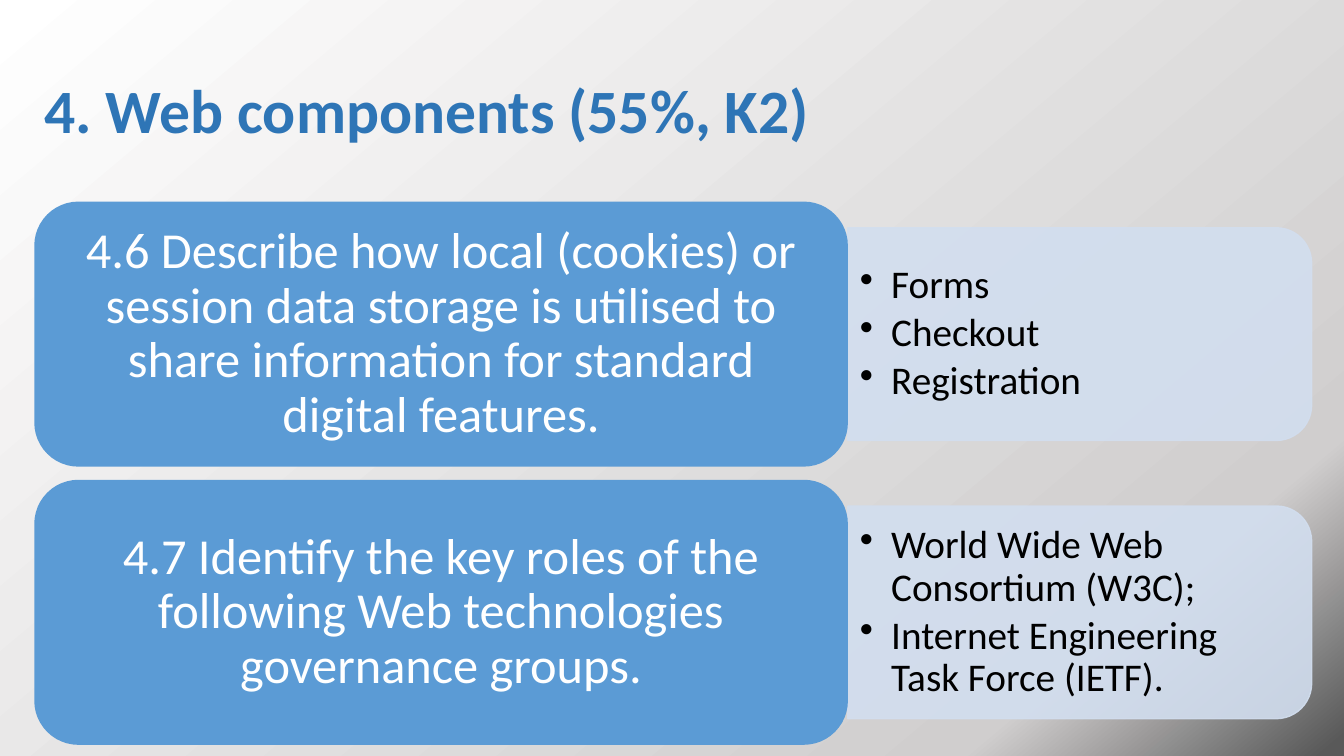
from copy import deepcopy
from dataclasses import dataclass
from math import cos, pi, sin

from lxml import etree
from pptx import Presentation
from pptx import util as u
from pptx.dml.color import RGBColor
from pptx.enum import shapes, text
from pptx.oxml import ns


@dataclass(frozen=True)
class Theme:
    font: str = "Calibri"
    title_size: int = 44
    outcome_size: int = 36
    detail_size: int = 28
    title: str = "2E75B6"
    outcome_fill: str = "5B9BD5"
    outcome_text: str = "FFFFFF"
    detail_fill: str = "D2DEEF"
    detail_text: str = "000000"
    detail_alpha: int = 90
    backdrop: tuple = ((0.01, "595959"), (0.17, "D0CECE"), (1, "FFFFFF"))


class OutcomeSlide:
    def __init__(self, slide, theme):
        self.slide = slide
        self.theme = theme

    def backdrop(self):
        fill = self.slide.background.fill
        fill.gradient()
        fill.gradient_angle = 130
        stops = self.slide.element.find(".//" + ns.qn("a:gsLst"))
        stops.append(deepcopy(stops[0]))
        for stop, (position, color) in zip(fill.gradient_stops, self.theme.backdrop):
            stop.position = position
            stop.color.rgb = RGBColor.from_string(color)

    def set_text(self, shape, lines, size, color, insets, align="LEFT",
                 bold=False, bullets=False):
        frame = shape.text_frame
        left, top, right, bottom = map(u.Inches, insets)
        frame_format = {
            "word_wrap": True, "vertical_anchor": text.MSO_ANCHOR.MIDDLE,
            "margin_left": left, "margin_top": top,
            "margin_right": right, "margin_bottom": bottom,
        }
        for name, value in frame_format.items():
            setattr(frame, name, value)
        frame.text = "\n".join(lines)
        for paragraph in frame.paragraphs:
            paragraph.alignment = getattr(text.PP_ALIGN, align)
            paragraph.line_spacing = 0.9
            if bullets:
                self.bullet(paragraph)
            font_format = {"name": self.theme.font, "size": u.Pt(size), "bold": bold}
            for name, value in font_format.items():
                setattr(paragraph.font, name, value)
            paragraph.font.color.rgb = RGBColor.from_string(color)

    def bullet(self, paragraph):
        paragraph.space_after = u.Pt(4)
        properties = paragraph._p.get_or_add_pPr()
        properties.set("marL", str(u.Inches(0.31)))
        properties.set("indent", str(-u.Inches(0.31)))
        etree.SubElement(properties, ns.qn("a:buChar")).set("char", "•")

    def title(self, words):
        heading = self.slide.shapes.add_textbox(
            u.Inches(0.34), u.Inches(0.4), u.Inches(12.68), u.Inches(1.45))
        self.set_text(heading, [words], self.theme.title_size, self.theme.title,
                      (0.1, 0.05, 0.1, 0.05), bold=True)

    def outcome(self, top, words):
        card = self.slide.shapes.add_shape(
            shapes.MSO_SHAPE.ROUNDED_RECTANGLE,
            u.Inches(0.34), u.Inches(top), u.Inches(8.07), u.Inches(2.63))
        card.shadow.inherit = False
        card.fill.solid()
        card.fill.fore_color.rgb = RGBColor.from_string(self.theme.outcome_fill)
        card.line.fill.background()
        self.set_text(card, [words], self.theme.outcome_size,
                      self.theme.outcome_text,
                      (0.15, 0.07, 0.15, 0.07), align="CENTER")

    def details(self, top, items):
        left, right, bottom, radius, steps = 8.41, 13.01, top + 2.11, 0.35, 12
        corners = ((top + radius, -pi / 2), (bottom - radius, 0))
        outline = [
            (right - radius + radius * cos(start + pi / 2 * step / steps),
             center + radius * sin(start + pi / 2 * step / steps))
            for center, start in corners for step in range(steps + 1)
        ] + [(left, bottom)]
        builder = self.slide.shapes.build_freeform(u.Inches(left), u.Inches(top))
        builder.add_line_segments([(u.Inches(x), u.Inches(y)) for x, y in outline])
        panel = builder.convert_to_shape()
        panel.shadow.inherit = False
        panel.line.width = u.Pt(1)
        for fill in (panel.fill, panel.line.fill):
            fill.solid()
            fill.fore_color.rgb = RGBColor.from_string(self.theme.detail_fill)
        for color in panel.element.spPr.iter(ns.qn("a:srgbClr")):
            alpha = etree.SubElement(color, ns.qn("a:alpha"))
            alpha.set("val", str(self.theme.detail_alpha * 1000))
        self.set_text(panel, items, self.theme.detail_size, self.theme.detail_text,
                      (0.12, 0.16, 0.22, 0.16), bullets=True)


OUTCOMES = (
    ("4.6 Describe how local (cookies) or session data storage is utilised "
     "to share information for standard digital features.",
     ("Forms", "Checkout", "Registration")),
    ("4.7 Identify the key roles of the following Web technologies "
     "governance groups.",
     ("World Wide Web Consortium (W3C);",
      "Internet Engineering Task Force (IETF).")),
)


def main():
    deck = Presentation()
    deck.slide_width, deck.slide_height = u.Inches(13.33), u.Inches(7.5)
    page = OutcomeSlide(deck.slides.add_slide(deck.slide_layouts[6]), Theme())
    page.backdrop()
    page.title("4. Web components (55%, K2)")
    for row, (outcome, details) in enumerate(OUTCOMES):
        top = 2 + 2.76 * row
        page.details(top + 0.26, details)
        page.outcome(top, outcome)
    deck.save("out.pptx")


if __name__ == "__main__":
    main()
